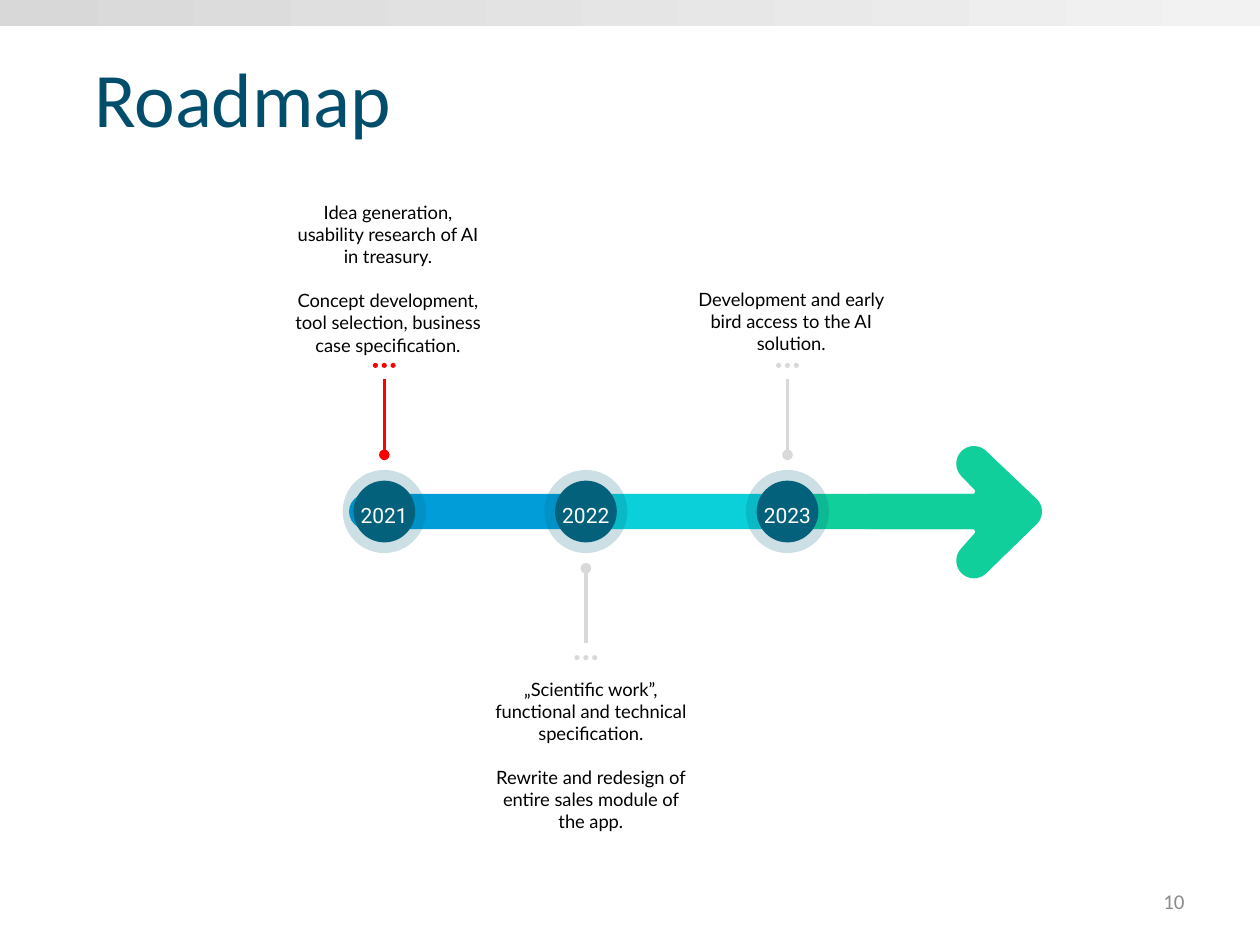
from dataclasses import dataclass
from math import cos, radians, sin

from lxml.etree import SubElement
from pptx import Presentation
from pptx.dml.color import RGBColor
from pptx.enum.shapes import MSO_CONNECTOR as Conn, MSO_SHAPE as Shape
from pptx.enum.text import MSO_ANCHOR as Anchor, PP_ALIGN as Align
from pptx.oxml.ns import qn
from pptx.util import Inches, Pt

COLORS = {
    "title": "004E6C", "number": "8C8C8C", "text": "000000", "white": "FFFFFF",
    "node": "04617B", "blue": "009DD9", "cyan": "0BD0D9", "green": "10CF9B",
    "red": "FF0000", "grey": "D9D9D9", "bar_start": "D8D8D8", "bar_end": "F2F2F2",
}
AXIS_Y = 4.06
FIRST_X, STEP_X = 3.05, 1.6


@dataclass
class Milestone:
    year: str
    notes: list[str]
    band: str
    accent: str
    above: bool
    note_left: float
    note_top: float
    note_height: float


@dataclass
class Arc:
    x: float
    y: float
    radius: float
    start: int
    end: int


MILESTONES = [
    Milestone("2021", ["Idea generation, usability research of AI in treasury.",
                       "Concept development, tool selection, business case specification."],
              "blue", "red", True, 2.22, 1.55, 1.34),
    Milestone("2022", ["„Scientific work”, functional and technical specification.",
                       "Rewrite and redesign of entire sales module of the app."],
              "cyan", "grey", False, 3.83, 5.33, 1.34),
    Milestone("2023", ["Development and early bird access to the AI solution."],
              "green", "grey", True, 5.42, 2.24, 0.63),
]

ARROW = [
    Arc(7.73, 3.68, 0.14, 135, 315),
    Arc(8.13, AXIS_Y, 0.14, 315, 405),
    Arc(7.73, 4.45, 0.14, 45, 225),
    Arc(7.72, 4.22, 0.02, 45, -90),
    Arc(6.91, AXIS_Y, 0.14, 90, 270),
    Arc(7.72, 3.9, 0.02, 90, -45),
]


def rgb(name: str) -> RGBColor:
    return RGBColor.from_string(COLORS[name])


def paint(s, color: str, alpha: int = 100) -> None:
    s.shadow.inherit = False
    s.line.fill.background()
    s.fill.solid()
    s.fill.fore_color.rgb = rgb(color)
    if alpha < 100:
        clr = s.fill._xPr.find(".//" + qn("a:srgbClr"))
        SubElement(clr, qn("a:alpha")).set("val", str(alpha * 1000))


def add_circle(shapes, x: float, y: float, size: float, color: str, alpha: int = 100) -> None:
    s = shapes.add_shape(Shape.OVAL, Inches(x - size / 2), Inches(y - size / 2),
                         Inches(size), Inches(size))
    paint(s, color, alpha)


def add_text(shapes, box: tuple, lines: list[str], font: str, size: float, color: str,
             align: Align = Align.CENTER, anchor: Anchor = Anchor.TOP) -> None:
    tf = shapes.add_textbox(*map(Inches, box)).text_frame
    tf.word_wrap = True
    tf.vertical_anchor = anchor
    tf.text = "\n".join(lines)
    for i, p in enumerate(tf.paragraphs):
        p.alignment = align
        if i:
            p.space_before = Pt(size * 1.2)
        for r in p.runs:
            r.font.name = font
            r.font.size = Pt(size)
            r.font.color.rgb = rgb(color)


def add_stem(shapes, x: float, m: Milestone) -> None:
    start, end, dots = (3.61, 3.01, 2.9) if m.above else (4.51, 5.1, 5.22)
    s = shapes.add_connector(Conn.STRAIGHT, Inches(x), Inches(start), Inches(x), Inches(end))
    s.line.color.rgb = rgb(m.accent)
    s.line.width = Pt(2)
    SubElement(s.line._get_or_add_ln(), qn("a:headEnd")).set("type", "oval")
    SubElement(s._element.spPr, qn("a:effectLst"))
    for i in (-1, 0, 1):
        add_circle(shapes, x + i * 0.07, dots, 0.04, m.accent)


def add_arrow(shapes, arcs: list[Arc]) -> None:
    steps = 16
    points = []
    for a in arcs:
        for i in range(steps + 1):
            t = radians(a.start + (a.end - a.start) * i / steps)
            points.append((Inches(a.x + a.radius * cos(t)), Inches(a.y + a.radius * sin(t))))
    builder = shapes.build_freeform(*points[0])
    builder.add_line_segments(points[1:], close=True)
    paint(builder.convert_to_shape(), "green")


def add_top_bar(shapes) -> None:
    s = shapes.add_shape(Shape.RECTANGLE, 0, 0, Inches(10), Inches(0.21))
    paint(s, "bar_start")
    s.fill.gradient()
    s.fill.gradient_angle = 0
    for stop, color in zip(s.fill.gradient_stops, ("bar_start", "bar_end")):
        stop.color.rgb = rgb(color)


def add_band(shapes, x: float, color: str) -> None:
    s = shapes.add_shape(Shape.ROUNDED_RECTANGLE, Inches(x - 0.28), Inches(AXIS_Y - 0.14),
                         Inches(1.89), Inches(0.28))
    s.adjustments[0] = 0.5
    paint(s, color)


def main() -> None:
    prs = Presentation()
    prs.slide_width, prs.slide_height = Inches(10), Inches(7.5)
    shapes = prs.slides.add_slide(prs.slide_layouts[6]).shapes

    add_top_bar(shapes)
    add_text(shapes, (0.65, 0.3, 9, 0.93), ["Roadmap"], "Calibri", 44, "title",
             Align.LEFT, Anchor.MIDDLE)
    add_text(shapes, (7.17, 6.95, 2.33, 0.4), ["10"], "Calibri", 12, "number",
             Align.RIGHT, Anchor.MIDDLE)

    add_arrow(shapes, ARROW)
    placed = [(FIRST_X + i * STEP_X, m) for i, m in enumerate(MILESTONES)]
    for x, m in reversed(placed):
        add_band(shapes, x, m.band)
    for x, m in placed:
        add_circle(shapes, x, AXIS_Y, 0.66, "node", 20)
        add_circle(shapes, x, AXIS_Y, 0.49, "node")
        add_text(shapes, (x - 0.33, 3.94, 0.66, 0.3), [m.year], "Roboto", 12, "white")
        add_stem(shapes, x, m)
        add_text(shapes, (m.note_left, m.note_top, 1.72, m.note_height), m.notes,
                 "Lato", 10.5, "text")

    prs.save("out.pptx")


if __name__ == "__main__":
    main()
